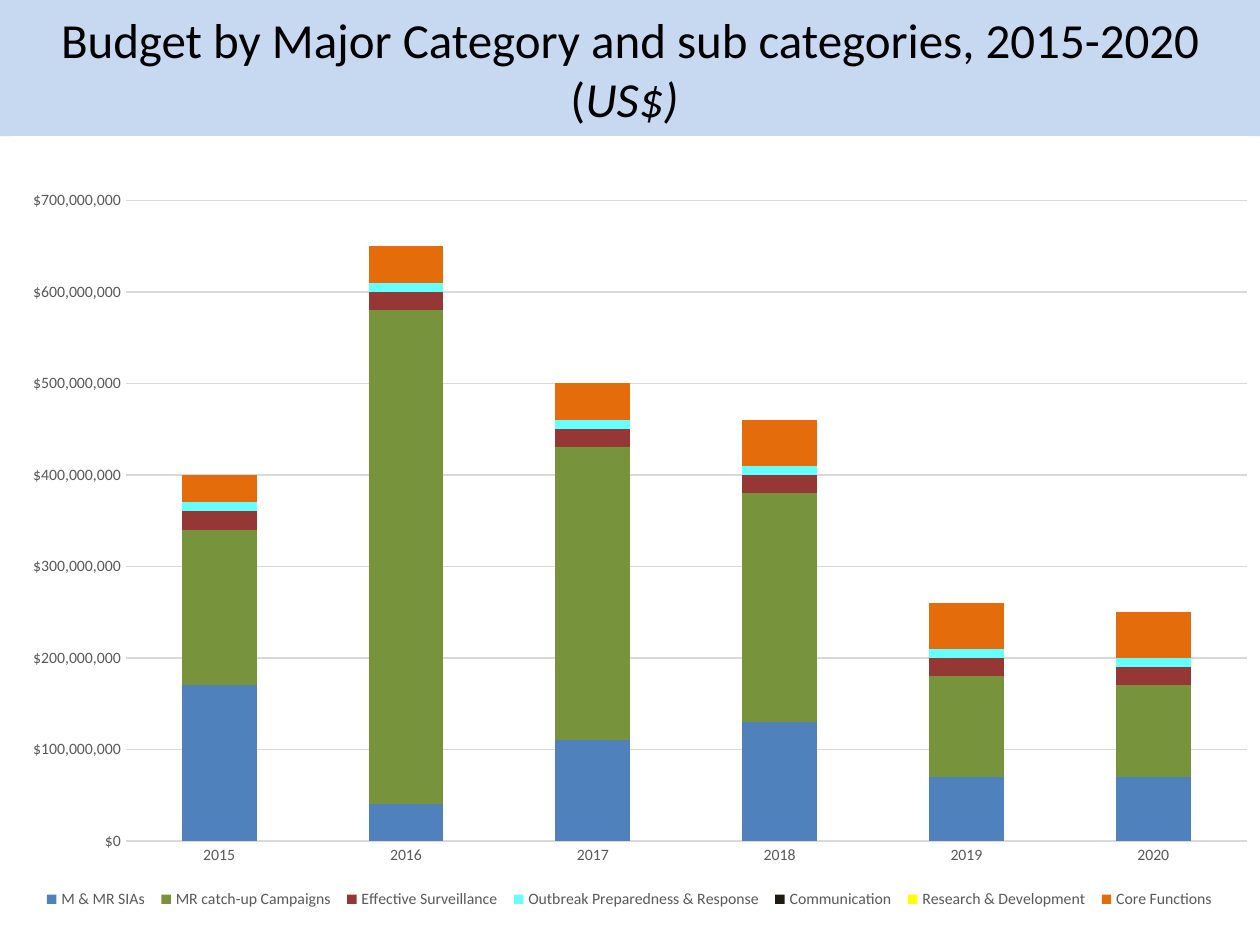
from dataclasses import dataclass

from lxml.etree import SubElement
from pptx import Presentation
from pptx.chart.chart import Chart
from pptx.chart.data import CategoryChartData
from pptx.dml.color import RGBColor
from pptx.enum.chart import XL_CHART_TYPE, XL_LEGEND_POSITION, XL_TICK_MARK
from pptx.enum.text import MSO_ANCHOR, MSO_AUTO_SIZE, PP_ALIGN
from pptx.oxml import parse_xml
from pptx.oxml.ns import nsdecls, qn
from pptx.util import Inches, Pt

FONT = "Calibri"
COLORS = {
    "banner": "C6D9F1", "text": "000000", "label": "595959",
    "grid": "D9D9D9", "paper": "FFFFFF",
    "sia": "4F81BD", "catch_up": "77933C", "surveillance": "953735",
    "outbreak": "66FFFF", "communication": "1E1C11",
    "research": "FFFF00", "core": "E46C0A",
}
YEARS = ("2015", "2016", "2017", "2018", "2019", "2020")
MILLION = 1_000_000
PLOT_SHARES = {"x": 0.093, "y": 0.081, "w": 0.906, "h": 0.815}
LEGEND_SHARES = {"x": 0.02, "y": 0.95, "w": 0.96, "h": 0.04}


@dataclass(frozen=True)
class Budget:
    name: str
    color: str
    millions: tuple[int, ...]


BUDGETS = (
    Budget("M & MR SIAs", "sia", (170, 40, 110, 130, 70, 70)),
    Budget("MR catch-up Campaigns", "catch_up", (170, 540, 320, 250, 110, 100)),
    Budget("Effective Surveillance", "surveillance", (20,) * 6),
    Budget("Outbreak Preparedness & Response", "outbreak", (10,) * 6),
    Budget("Communication", "communication", (0,) * 6),
    Budget("Research & Development", "research", (0,) * 6),
    Budget("Core Functions", "core", (30, 40, 40, 50, 50, 50)),
)


def rgb(name: str) -> RGBColor:
    return RGBColor.from_string(COLORS[name])


def style_font(font, size: float, color: str) -> None:
    font.name, font.size = FONT, Pt(size)
    font.color.rgb = rgb(color)


def add_text(paragraph, text: str, *, size: float, color: str = "text",
             italic: bool = False) -> None:
    run = paragraph.add_run()
    run.text = text
    style_font(run.font, size, color)
    run.font.italic = italic


def add_banner(title, width: int, height: int) -> None:
    title.left, title.top, title.width, title.height = 0, 0, width, height
    title.fill.solid()
    title.fill.fore_color.rgb = rgb("banner")
    frame = title.text_frame
    frame.auto_size = MSO_AUTO_SIZE.NONE
    frame.word_wrap = True
    frame.vertical_anchor = MSO_ANCHOR.MIDDLE
    heading = frame.paragraphs[0]
    heading.alignment = PP_ALIGN.CENTER
    add_text(heading, "Budget by Major Category and sub categories, 2015-2020 (", size=28)
    add_text(heading, "US$) ", size=28, italic=True)


def place_part(part, position: int, shares: dict[str, float], **modes: str) -> None:
    """Fix a chart part's place as shares of the chart's size."""
    for old in part.findall(qn("c:layout")):
        part.remove(old)
    layout = parse_xml(f"<c:layout {nsdecls('c')}/>")
    manual = SubElement(layout, qn("c:manualLayout"))
    settings = {**modes, "xMode": "edge", "yMode": "edge", **shares}
    for tag, value in settings.items():
        SubElement(manual, qn(f"c:{tag}")).set("val", str(value))
    part.insert(position, layout)


def paint_chart_area(chart: Chart) -> None:
    paint = f'<a:solidFill><a:srgbClr val="{COLORS["paper"]}"/></a:solidFill>'
    chart._chartSpace.chart.addnext(parse_xml(
        f'<c:spPr {nsdecls("c", "a")}>{paint}<a:ln w="{Pt(0.75)}">{paint}</a:ln></c:spPr>'))


def style_line(line) -> None:
    line.color.rgb = rgb("grid")
    line.width = Pt(0.75)


def style_axes(chart: Chart) -> None:
    for axis in (chart.category_axis, chart.value_axis):
        axis.major_tick_mark = axis.minor_tick_mark = XL_TICK_MARK.NONE
        style_font(axis.tick_labels.font, 9, "label")
    style_line(chart.category_axis.format.line)
    amounts = chart.value_axis
    amounts.minimum_scale, amounts.maximum_scale = 0, 700 * MILLION
    amounts.major_unit = 100 * MILLION
    amounts.tick_labels.number_format = '"$"#,##0'
    amounts.tick_labels.number_format_is_linked = False
    amounts.format.line.fill.background()
    style_line(amounts.major_gridlines.format.line)


def add_budget_chart(slide, left: int, top: int, width: int, height: int) -> None:
    data = CategoryChartData(number_format='"$"#,##0')
    data.categories = YEARS
    for budget in BUDGETS:
        data.add_series(budget.name, [amount * MILLION for amount in budget.millions])
    chart = slide.shapes.add_chart(
        XL_CHART_TYPE.COLUMN_STACKED, left, top, width, height, data).chart
    chart.has_title = False
    style_font(chart.font, 10, "text")
    plot = chart.plots[0]
    plot.gap_width, plot.overlap, plot.vary_by_categories = 150, 100, False
    for series, budget in zip(plot.series, BUDGETS):
        series.format.fill.solid()
        series.format.fill.fore_color.rgb = rgb(budget.color)
        series.invert_if_negative = False
    style_axes(chart)
    chart.has_legend = True
    chart.legend.position = XL_LEGEND_POSITION.BOTTOM
    chart.legend.include_in_layout = False
    style_font(chart.legend.font, 9, "label")
    chart_body = chart._chartSpace.chart
    place_part(chart_body.plotArea, 0, PLOT_SHARES, layoutTarget="inner")
    place_part(chart_body.find(qn("c:legend")), 1, LEGEND_SHARES)
    paint_chart_area(chart)


def main() -> None:
    deck = Presentation()
    deck.slide_width, deck.slide_height = Inches(10), Inches(7.5)
    slide = deck.slides.add_slide(deck.slide_layouts.get_by_name("Title Only"))
    banner_height = Inches(1.08)
    add_banner(slide.shapes.title, deck.slide_width, banner_height)
    add_budget_chart(slide, Inches(0.08), banner_height, Inches(9.83), Inches(6.25))
    deck.save("out.pptx")


if __name__ == "__main__":
    main()
